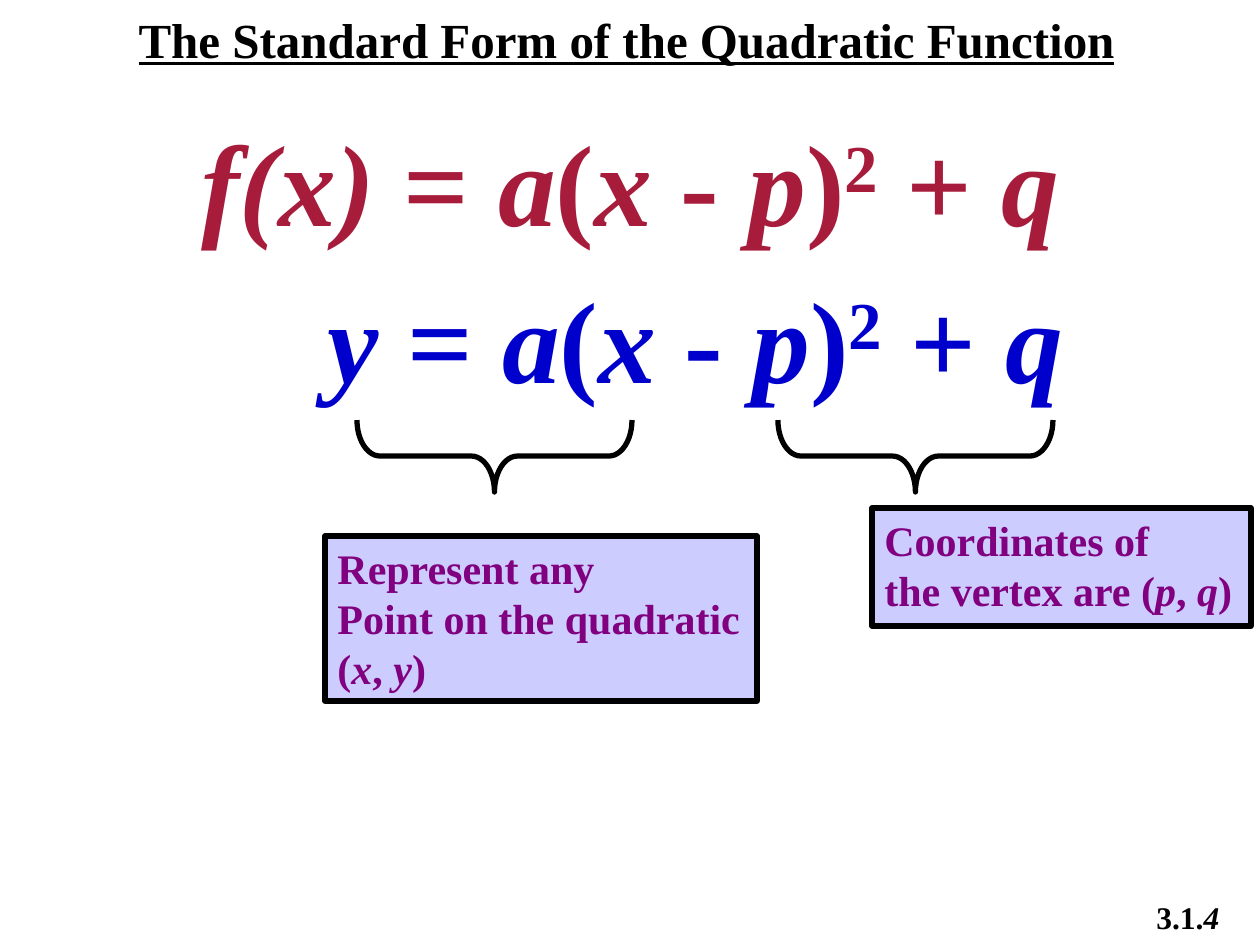
import pptx
import pptx.dml.color
import pptx.enum.shapes
import pptx.enum.text
import pptx.oxml
import pptx.util

RGBColor = pptx.dml.color.RGBColor
BLACK = RGBColor(0x00, 0x00, 0x00)
WHITE = RGBColor(0xFF, 0xFF, 0xFF)
CRIMSON = RGBColor(0xA8, 0x1C, 0x3B)
BLUE = RGBColor(0x00, 0x00, 0xCC)
PURPLE = RGBColor(0x80, 0x00, 0x80)
LAVENDER = RGBColor(0xCC, 0xCC, 0xFF)

FONT = "Times New Roman"
PX = 914400 / 126
SHAPES = pptx.enum.shapes.MSO_SHAPE
VERTEX_FORM = " = *a*(*x* - *p*)^2^ + *q*"


def emu(box):
    return [round(length * PX) for length in box]


def write(holder, text, size, color, underline=None):
    frame = holder.text_frame
    frame.word_wrap = False
    frame.auto_size = pptx.enum.text.MSO_AUTO_SIZE.SHAPE_TO_FIT_TEXT
    frame.vertical_anchor = pptx.enum.text.MSO_ANCHOR.TOP
    for index, line in enumerate(text.split("\n")):
        paragraph = frame.add_paragraph() if index else frame.paragraphs[0]
        paragraph.alignment = pptx.enum.text.PP_ALIGN.LEFT
        for part, phrase in enumerate(line.split("*")):
            for level, words in enumerate(phrase.split("^")):
                if not words:
                    continue
                run = paragraph.add_run()
                run.text = words
                run.font.name = FONT
                run.font.size = pptx.util.Pt(size)
                run.font.color.rgb = color
                run.font.bold = True
                run.font.italic = part % 2 == 1
                run.font.underline = underline
                if level % 2:
                    run._r.get_or_add_rPr().set("baseline", "30000")


def place_title(slide, box, text):
    title = slide.shapes.title
    title.left, title.top, title.width, title.height = emu(box)
    write(title, text, size=28, color=BLACK, underline=True)


def add_formula(slide, box, text, color):
    formula = slide.shapes.add_textbox(*emu(box))
    write(formula, text, size=66, color=color)


def add_brace(slide, box):
    left, top, width, height = box
    inset = (width - height) / 2
    upright = (left + inset, top - inset, height, width)
    brace = slide.shapes.add_shape(SHAPES.LEFT_BRACE, *emu(upright))
    brace.rotation = 270
    brace.adjustments[0] = 0.32
    brace.adjustments[1] = 0.5
    brace.shadow.inherit = False
    brace.fill.background()
    brace.line.color.rgb = BLACK
    brace.line.width = pptx.util.Pt(3)


def add_callout(slide, box, text):
    callout = slide.shapes.add_shape(SHAPES.RECTANGLE, *emu(box))
    callout.shadow.inherit = False
    callout.fill.solid()
    callout.fill.fore_color.rgb = LAVENDER
    callout.line.color.rgb = BLACK
    callout.line.width = pptx.util.Pt(3)
    write(callout, text, size=24, color=PURPLE)


def add_lesson_number(slide, box, text):
    number = slide.shapes.add_shape(SHAPES.RECTANGLE, *emu(box))
    number.shadow.inherit = False
    number.fill.solid()
    number.fill.fore_color.rgb = WHITE
    tint = number._element.spPr.find(".//" + pptx.oxml.ns.qn("a:srgbClr"))
    alpha = pptx.oxml.parse_xml(
        f'<a:alpha {pptx.oxml.ns.nsdecls("a")} val="50000"/>')
    tint.append(alpha)
    number.line.fill.background()
    write(number, text, size=18, color=BLACK)


def main():
    deck = pptx.Presentation()
    deck.slide_width, deck.slide_height = emu((1260, 945))
    slide = deck.slides.add_slide(deck.slide_layouts[5])

    place_title(slide, (126, 3, 1003, 72),
                "The Standard Form of the Quadratic Function")
    add_formula(slide, (189, 105, 888, 151), "*f(x)*" + VERTEX_FORM, CRIMSON)
    add_formula(slide, (315, 262, 766, 151), "*y*" + VERTEX_FORM, BLUE)
    for brace_left in (357, 778):
        add_brace(slide, (brace_left, 420, 275, 72))
    add_callout(slide, (872, 508, 379, 118),
                "Coordinates of\nthe vertex are (*p*, *q*)")
    add_callout(slide, (325, 536, 432, 165),
                "Represent any\nPoint on the quadratic\n(*x*, *y*)")
    add_lesson_number(slide, (1144, 892, 89, 50), "3.1.*4*")

    deck.save("out.pptx")


if __name__ == "__main__":
    main()
